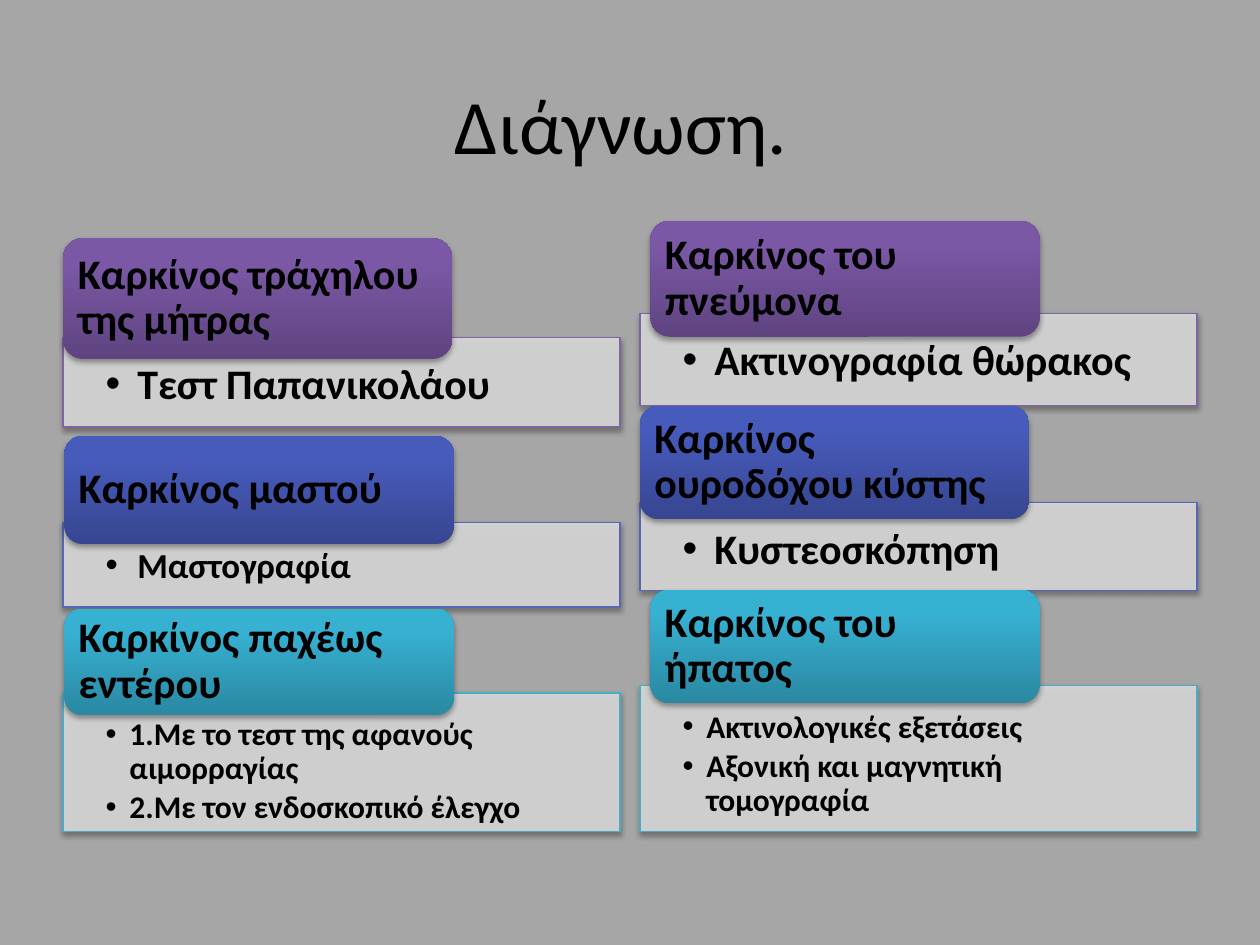
from lxml import etree
from pptx import Presentation
from pptx.dml.color import RGBColor
from pptx.enum import shapes, text
from pptx.oxml.ns import qn
from pptx.util import Cm, Pt


def hue(code):
    return RGBColor.from_string(code)


def block(kind, left, top, wide, high, inset, above):
    """Add a shape with a soft shadow and left-aligned text insets."""
    shape = slide.shapes.add_shape(kind, Cm(left), Cm(top), Cm(wide), Cm(high))
    shape.shadow.inherit = False
    glow = etree.SubElement(
        shape._element.spPr.find(qn("a:effectLst")), qn("a:outerShdw"),
        blurRad="40000", dist="23000", dir="5400000", rotWithShape="0")
    tint = etree.SubElement(glow, qn("a:srgbClr"), val="000000")
    etree.SubElement(tint, qn("a:alpha"), val="35000")
    frame = shape.text_frame
    frame.word_wrap = True
    frame.margin_left = frame.margin_right = Cm(inset)
    frame.margin_top, frame.margin_bottom = Cm(above), 0
    return shape


deck = Presentation()
deck.slide_width, deck.slide_height = Cm(25.4), Cm(19.05)
slide = deck.slides.add_slide(deck.slide_layouts[5])
slide.background.fill.solid()
slide.background.fill.fore_color.rgb = hue("A6A6A6")

title = slide.shapes.title
title.left, title.top, title.width, title.height = Cm(1.09), Cm(0.91), Cm(22.86), Cm(3.18)
title.text_frame.text = "Διάγνωση."
title.text_frame.vertical_anchor = text.MSO_ANCHOR.MIDDLE
para = title.text_frame.paragraphs[0]
para.alignment = text.PP_ALIGN.CENTER
para.font.name, para.font.size = "Calibri", Pt(44)
para.font.color.rgb = hue("000000")

# Each row: outline, dark and light end of the heading's gradient
rows = [("8064A2", "5F4480", "7B58A6"),
        ("5767B4", "374691", "475BBC"),
        ("4BACC6", "2A88A2", "37B1D2")]

# Column: left, then per row:
# heading, its left, top, height, list top, height, text size, items
cols = [
    (1.27, [
        ("Καρκίνος τράχηλου της μήτρας", 1.27, 4.8, 2.44, 6.81, 1.8, 24,
         ["Τεστ Παπανικολάου"]),
        ("Καρκίνος μαστού", 1.3, 8.79, 2.18, 10.54, 1.7, 20,
         ["Μαστογραφία"]),
        ("Καρκίνος παχέως εντέρου", 1.3, 12.27, 2.15, 13.97, 2.8, 18,
         ["1.Με το τεστ της αφανούς αιμορραγίας", "2.Με τον ενδοσκοπικό έλεγχο"]),
    ]),
    (12.9, [
        ("Καρκίνος του πνεύμονα", 13.11, 4.45, 2.34, 6.32, 1.85, 24,
         ["Aκτινογραφία θώρακος"]),
        ("Kαρκίνος ουροδόχου κύστης", 12.9, 8.18, 2.29, 10.13, 1.78, 24,
         ["Κυστεοσκόπηση"]),
        ("Καρκίνος του ήπατος", 13.11, 11.89, 2.29, 13.82, 2.95, 18,
         ["Ακτινολογικές εξετάσεις", "Αξονική και μαγνητική τομογραφία"]),
    ]),
]

for left, cells in cols:
    for (edge, dark, light), cell in zip(rows, cells):
        name, x, y, high, low, deep, size, items = cell

        box = block(shapes.MSO_SHAPE.RECTANGLE, left, low, 11.23, deep, 0.86, 0.51)
        box.fill.solid()
        box.fill.fore_color.rgb = hue("D9D9D9")
        shade = box._element.spPr.find(qn("a:solidFill"))[0]
        etree.SubElement(shade, qn("a:alpha"), val="90000")
        box.line.color.rgb = hue(edge)
        box.line.width = Pt(0.75)
        box.text_frame.text = "\n".join(items)
        box.text_frame.vertical_anchor = text.MSO_ANCHOR.TOP
        dent = Cm(0.48 if size == 18 else 0.64)
        for para in box.text_frame.paragraphs:
            para.level = 1
            para.space_after = Pt(3)
            props = para._p.get_or_add_pPr()
            props.set("marL", str(dent))
            props.set("indent", str(-dent))
            etree.SubElement(props, qn("a:buFont"), typeface="Arial")
            etree.SubElement(props, qn("a:buChar"), char="•")

        head = block(shapes.MSO_SHAPE.ROUNDED_RECTANGLE, x, y, 7.85, high, 0.18, 0)
        head.fill.gradient()
        head.fill.gradient_angle = 90
        for stop, code, spot in zip(head.fill.gradient_stops, (dark, light), (0, 0.8)):
            stop.color.rgb = hue(code)
            stop.position = spot
        head.line.fill.background()
        head.text_frame.text = name
        head.text_frame.vertical_anchor = text.MSO_ANCHOR.MIDDLE

        for shape, points in ((box, size), (head, 24)):
            for para in shape.text_frame.paragraphs:
                para.alignment = text.PP_ALIGN.LEFT
                para.line_spacing = 0.9
                para.font.name, para.font.size = "Calibri", Pt(points)
                para.font.bold = True
                para.font.color.rgb = hue("000000")

deck.save("out.pptx")
